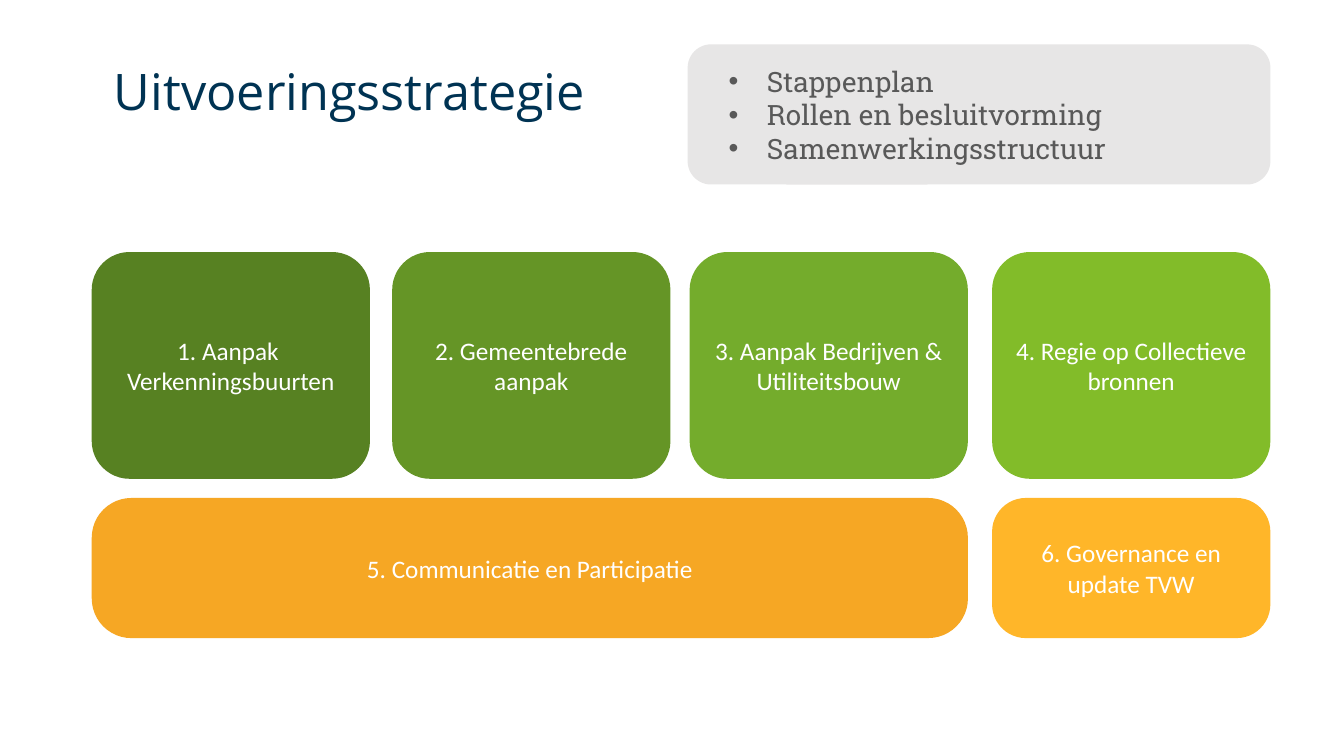
from lxml import etree
from pptx import Presentation
from pptx import util as u
from pptx.dml.color import RGBColor
from pptx.enum import shapes, text
from pptx.oxml import ns

WIDE, HIGH = 2.76, 2.25
LOW = 1.39
COLS = [0.91, 3.89, 6.84, 9.84]
ROWS = [2.5, 4.94]
SPAN = COLS[2] + WIDE - COLS[0]
KIND = shapes.MSO_SHAPE


def style(par, size, face, color, align):
    par.font.size = u.Pt(size)
    par.font.name = face
    par.font.color.rgb = RGBColor.from_string(color)
    par.alignment = align


def panel(tree, kind, box, fill, adjust):
    """Add a plain filled shape and return its text frame."""
    shape = tree.add_shape(kind, *[u.Inches(v) for v in box])
    shape.shadow.inherit = False
    shape.fill.solid()
    shape.fill.fore_color.rgb = RGBColor.from_string(fill)
    shape.line.fill.background()
    for i, value in enumerate(adjust):
        shape.adjustments[i] = value
    frame = shape.text_frame
    frame.word_wrap = True
    frame.vertical_anchor = text.MSO_ANCHOR.MIDDLE
    return frame


deck = Presentation()
deck.slide_width, deck.slide_height = u.Inches(13.33), u.Inches(7.5)
slide = deck.slides.add_slide(deck.slide_layouts[5])

# Title
title = slide.shapes.title
title.left, title.top = u.Inches(1.03), u.Inches(0.4)
title.width, title.height = u.Inches(12.33), u.Inches(1.06)
title.text_frame.text = "Uitvoeringsstrategie"
title.text_frame.vertical_anchor = text.MSO_ANCHOR.MIDDLE
head = title.text_frame.paragraphs[0]
head.line_spacing = 0.9
style(head, 36, "Open Sans", "003353", text.PP_ALIGN.LEFT)

# Six strategy tracks: label, column, row, width, height, fill, corner
tracks = [
    ("1. Aanpak \nVerkenningsbuurten", 0, 0, WIDE, HIGH, "578122", 0.167),
    ("2. Gemeentebrede aanpak", 1, 0, WIDE, HIGH, "659526", 0.167),
    ("3. Aanpak Bedrijven & Utiliteitsbouw", 2, 0, WIDE, HIGH, "74AC2C", 0.167),
    ("4. Regie op Collectieve bronnen", 3, 0, WIDE, HIGH, "82BC29", 0.167),
    ("6. Governance en update TVW", 3, 1, WIDE, LOW, "FFB629", 0.241),
    ("5. Communicatie en Participatie", 0, 1, SPAN, LOW, "F6A724", 0.283),
]
group = slide.shapes.add_group_shape()
for label, col, row, wide, high, fill, corner in tracks:
    box = (COLS[col], ROWS[row], wide, high)
    frame = panel(group.shapes, KIND.ROUNDED_RECTANGLE, box, fill, [corner])
    par = frame.paragraphs[0]
    par.text = label
    style(par, 18, "Calibri", "FFFFFF", text.PP_ALIGN.CENTER)

# Topic list
frame = panel(slide.shapes, KIND.ROUNDED_RECTANGULAR_CALLOUT,
              (6.82, 0.44, 5.78, LOW), "E7E6E6", [-0.251, 0.501, 0.167])
frame.text = "Stappenplan\nRollen en besluitvorming\nSamenwerkingsstructuur"
for par in frame.paragraphs:
    par.level = 1
    style(par, 20, "Roboto Slab", "595959", text.PP_ALIGN.LEFT)
    props = par._p.get_or_add_pPr()
    props.set("marL", str(u.Inches(0.62)))
    props.set("indent", str(u.Inches(-0.38)))
    font = etree.Element(ns.qn("a:buFont"), typeface="Arial")
    mark = etree.Element(ns.qn("a:buChar"), char="•")
    spot = props.find(ns.qn("a:defRPr"))
    spot.addprevious(font)
    spot.addprevious(mark)

deck.save("out.pptx")
